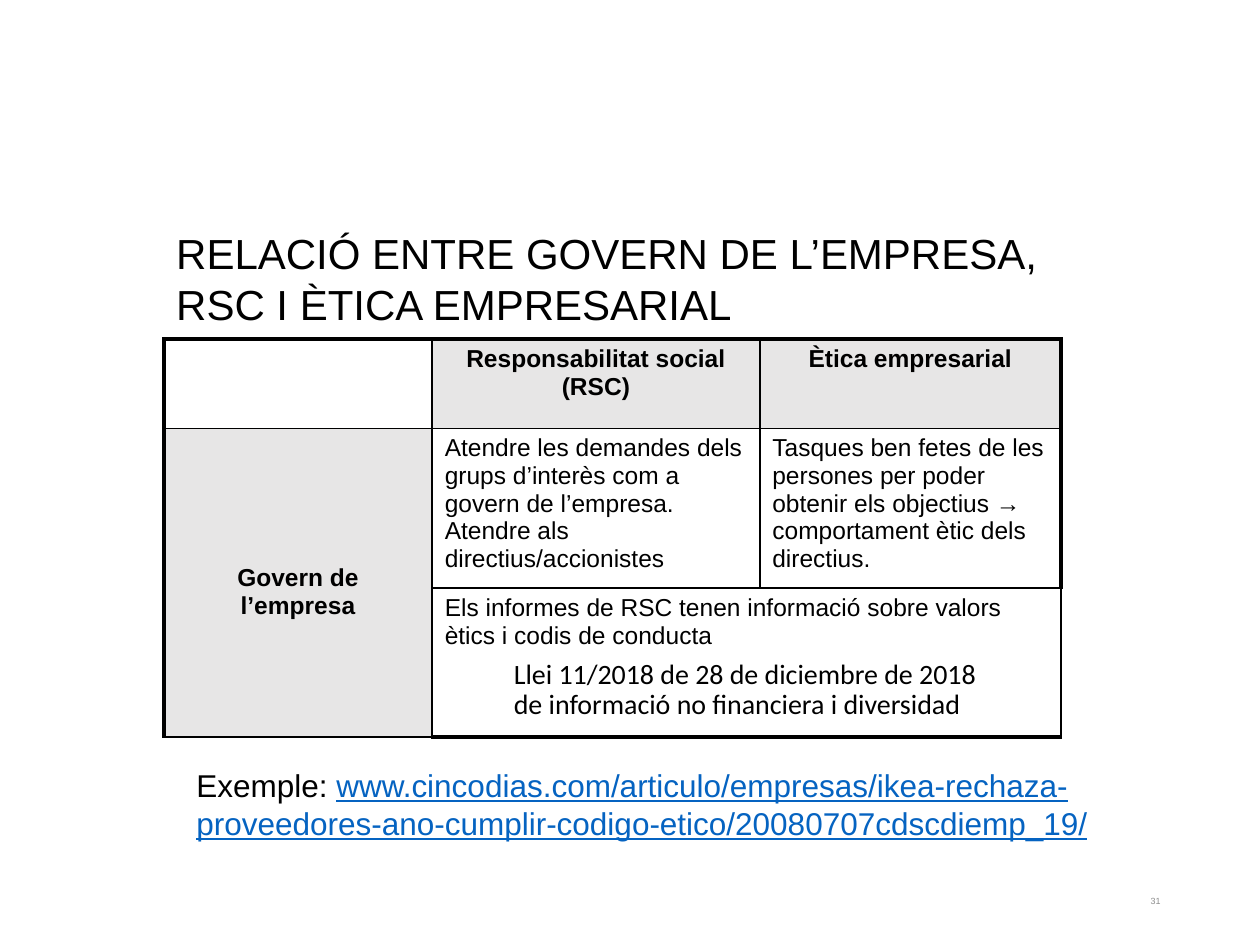
from lxml import etree
from pptx import Presentation
from pptx.dml.color import RGBColor
from pptx.enum import text
from pptx.oxml.ns import qn
from pptx.util import Inches, Pt

BLACK = RGBColor(0x00, 0x00, 0x00)
GREY = RGBColor(0xE7, 0xE6, 0xE6)
DIM = RGBColor(0x8C, 0x8C, 0x8C)
BLUE = RGBColor(0x05, 0x63, 0xC1)
LEFT, MID, RIGHT = text.PP_ALIGN.LEFT, text.PP_ALIGN.CENTER, text.PP_ALIGN.RIGHT

COLS = [2.13, 2.6, 2.39]
ROWS = [0.71, 1.26, 1.18]
# Row, column, wording, is it a heading
CELLS = [
    (0, 1, "Responsabilitat social (RSC)", True),
    (0, 2, "Ètica empresarial", True),
    (1, 0, "Govern de l’empresa", True),
    (1, 1, "Atendre les demandes dels grups d’interès com a govern de "
           "l’empresa. Atendre als directius/accionistes", False),
    (1, 2, "Tasques ben fetes de les persones per poder obtenir els "
           "objectius → comportament ètic dels directius.", False),
    (2, 1, "Els informes de RSC tenen informació sobre valors ètics i codis "
           "de conducta", False),
]
URL = ("www.cincodias.com/articulo/empresas/ikea-rechaza-proveedores-ano-"
       "cumplir-codigo-etico/20080707cdscdiemp_19/")


def style(font, color=BLACK, **form):
    for key, val in form.items():
        setattr(font, key, val)
    font.color.rgb = color


def add_text(slide, box, lines, align=LEFT, space=None,
             anchor=text.MSO_ANCHOR.TOP, **form):
    """Place lines of (wording, extra format) runs in the box."""
    frame = slide.shapes.add_textbox(*map(Inches, box)).text_frame
    frame.word_wrap = True
    frame.vertical_anchor = anchor
    for i, runs in enumerate(lines):
        para = frame.add_paragraph() if i else frame.paragraphs[0]
        para.alignment = align
        para.line_spacing = space
        for words, extra in runs:
            run = para.add_run()
            run.text = words
            style(run.font, **{**form, **extra})


def add_edges(cell, row, col):
    """Draw thick lines on the rim of the table and thin ones inside."""
    rim = {"L": col == 0, "R": col == len(COLS) - 1,
           "T": row == 0, "B": row == len(ROWS) - 1}
    props = cell._tc.get_or_add_tcPr()
    for i, (side, thick) in enumerate(rim.items()):
        line = etree.Element(qn(f"a:ln{side}"), w=str(Pt(2.25 if thick else 1)))
        fill = etree.SubElement(line, qn("a:solidFill"))
        etree.SubElement(fill, qn("a:srgbClr"), val=str(BLACK))
        props.insert(i, line)


def add_grid(slide, left, top):
    box = map(Inches, (left, top, sum(COLS), sum(ROWS)))
    table = slide.shapes.add_table(len(ROWS), len(COLS), *box).table
    table.first_row = table.horz_banding = False
    for col, width in zip(table.columns, COLS):
        col.width = Inches(width)
    for row, height in zip(table.rows, ROWS):
        row.height = Inches(height)
    for r in range(len(ROWS)):
        for c in range(len(COLS)):
            cell = table.cell(r, c)
            cell.fill.background()
            add_edges(cell, r, c)
    table.cell(1, 0).merge(table.cell(2, 0))
    table.cell(2, 1).merge(table.cell(2, 2))

    for r, c, words, head in CELLS:
        cell = table.cell(r, c)
        para = cell.text_frame.paragraphs[0]
        para.alignment = MID if head else LEFT
        run = para.add_run()
        run.text = words
        style(run.font, name="Arial", size=Pt(14), bold=head)
        if head:
            cell.fill.solid()
            cell.fill.fore_color.rgb = GREY
    # The row heading sits a little below the middle
    side = table.cell(1, 0)
    side.vertical_anchor = text.MSO_ANCHOR.MIDDLE
    side.margin_top = Inches(0.2)
    side.margin_left = side.margin_right = Inches(0.3)


def main():
    deck = Presentation()
    deck.slide_width, deck.slide_height = Inches(10), Inches(7.5)
    slide = deck.slides.add_slide(deck.slide_layouts[6])

    # Title
    add_text(slide, (1.3, 1.76, 8.35, 0.91),
             [[("RELACIÓ ENTRE GOVERN DE L’EMPRESA,", {})],
              [("RSC I ÈTICA EMPRESARIAL", {})]],
             name="Arial", size=Pt(24))
    # Table and the law named in its last cell
    add_grid(slide, 1.3, 2.69)
    add_text(slide, (3.98, 5.19, 3.94, 0.59),
             [[("Llei 11/2018 de 28 de diciembre de 2018 de informació no "
                "financiera i diversidad", {})]],
             space=0.9, name="Calibri", size=Pt(16))
    # Example
    add_text(slide, (1.46, 6.03, 7.64, 0.71),
             [[("Exemple: ", {}), (URL, {"color": BLUE, "underline": True})]],
             name="Arial", size=Pt(18))
    # Slide number
    add_text(slide, (7.06, 6.95, 2.25, 0.4), [[("31", {})]], align=RIGHT,
             anchor=text.MSO_ANCHOR.MIDDLE, name="Arial", size=Pt(5.1),
             color=DIM)
    deck.save("out.pptx")


if __name__ == "__main__":
    main()
